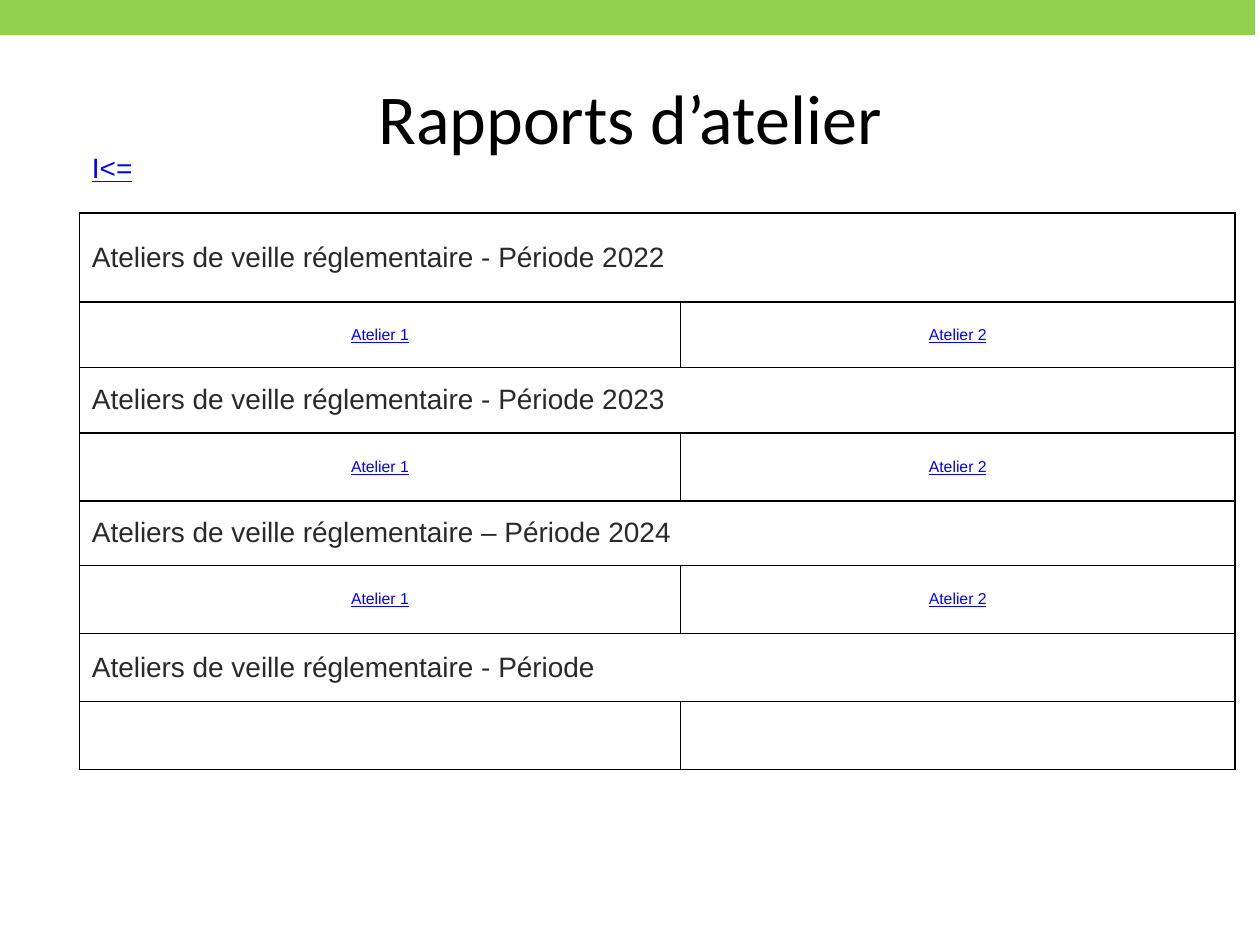
from dataclasses import dataclass

from lxml import etree
from pptx import Presentation
from pptx.dml.color import RGBColor
from pptx.enum.shapes import MSO_SHAPE
from pptx.enum.text import MSO_ANCHOR, PP_ALIGN
from pptx.oxml.ns import qn
from pptx.util import Cm, Pt

LEFT, CENTER = PP_ALIGN.LEFT, PP_ALIGN.CENTER
MIDDLE = MSO_ANCHOR.MIDDLE
RECTANGLE = MSO_SHAPE.RECTANGLE


@dataclass(frozen=True)
class Theme:
    band: str = "92D050"
    title: str = "000000"
    heading: str = "292929"
    link: str = "0000FF"
    border: str = "000000"
    title_font: str = "Calibri"
    body_font: str = "Arial"
    title_size: int = 40
    heading_size: int = 16
    link_size: int = 9
    border_width: int = 1


THEME = Theme()
COLUMN_WIDTHS = [3.43, 1.4, 2.01, 4.14, 0.33, 0.81, 4.8, 1.4, 2.03, 2.95]
ROW_HEIGHTS = [1.78, 1.8, 1.32, 1.32, 1.37, 1.3, 1.37, 1.37, 1.37, 1.96]
LAST_COLUMN = len(COLUMN_WIDTHS) - 1
LAST_ROW = len(ROW_HEIGHTS) - 1
SECOND_WORKSHOP = 6
NAVIGATION_SPANS = [(1, 2), (3, 4), (5, 6), (7, 8)]
FOOTER_SPANS = [(2, 3), (4, 7)]
PERIODS = [
    ("Ateliers de veille réglementaire - Période 2022", ["Atelier 1", "Atelier 2"]),
    ("Ateliers de veille réglementaire - Période 2023", ["Atelier 1", "Atelier 2"]),
    ("Ateliers de veille réglementaire – Période 2024", ["Atelier 1", "Atelier 2"]),
    ("Ateliers de veille réglementaire - Période", []),
]


def style_paragraph(paragraph, font_name, size, color, align=LEFT, underline=False):
    paragraph.alignment = align
    font = paragraph.font
    font.name = font_name
    font.size = Pt(size)
    font.color.rgb = RGBColor.from_string(color)
    font.underline = underline


def add_band(slide):
    band = slide.shapes.add_shape(RECTANGLE, 0, 0, Cm(25.3), Cm(0.71))
    band.shadow.inherit = False
    band.fill.solid()
    band.fill.fore_color.rgb = RGBColor.from_string(THEME.band)
    band.line.fill.background()


def set_title(slide, text):
    title = slide.shapes.title
    title.left, title.top = Cm(1.27), Cm(0.76)
    title.width, title.height = Cm(22.86), Cm(3.18)
    title.text_frame.text = text
    title.text_frame.vertical_anchor = MIDDLE
    style_paragraph(title.text_frame.paragraphs[0], THEME.title_font,
                    THEME.title_size, THEME.title, CENTER)


def set_borders(cell, drawn_sides):
    properties = cell._tc.get_or_add_tcPr()
    for position, side in enumerate("LRTB"):
        line = etree.Element(qn(f"a:ln{side}"), w=str(Pt(THEME.border_width)))
        if side in drawn_sides:
            fill = etree.SubElement(line, qn("a:solidFill"))
            etree.SubElement(fill, qn("a:srgbClr"), val=THEME.border)
        else:
            etree.SubElement(line, qn("a:noFill"))
        properties.insert(position, line)


def write_cell(cell, text, size, color, align=LEFT, underline=False):
    cell.text = text
    cell.vertical_anchor = MIDDLE
    style_paragraph(cell.text_frame.paragraphs[0], THEME.body_font,
                    size, color, align, underline)


def merge_columns(table, row, first, last):
    table.cell(row, first).merge(table.cell(row, last))


def add_grid(slide):
    table = slide.shapes.add_table(
        len(ROW_HEIGHTS), len(COLUMN_WIDTHS), Cm(1.6), Cm(2.51),
        Cm(sum(COLUMN_WIDTHS)), Cm(sum(ROW_HEIGHTS))).table
    table.first_row = False
    table.horz_banding = False
    for column, width in zip(table.columns, COLUMN_WIDTHS):
        column.width = Cm(width)
    for row_index, (row, height) in enumerate(zip(table.rows, ROW_HEIGHTS)):
        row.height = Cm(height)
        sides = {0: "B", LAST_ROW: "T"}.get(row_index, "LRTB")
        for cell in row.cells:
            cell.fill.background()
            set_borders(cell, sides)
    return table


def fill_periods(table):
    for index, (heading, workshops) in enumerate(PERIODS):
        heading_row = 1 + 2 * index
        workshop_row = heading_row + 1
        merge_columns(table, heading_row, 0, LAST_COLUMN)
        merge_columns(table, workshop_row, 0, SECOND_WORKSHOP - 1)
        merge_columns(table, workshop_row, SECOND_WORKSHOP, LAST_COLUMN)
        write_cell(table.cell(heading_row, 0), heading,
                   THEME.heading_size, THEME.heading)
        for column, workshop in zip((0, SECOND_WORKSHOP), workshops):
            write_cell(table.cell(workshop_row, column), workshop,
                       THEME.link_size, THEME.link, CENTER, True)


def add_reports_table(slide):
    table = add_grid(slide)
    for row, spans in ((0, NAVIGATION_SPANS), (LAST_ROW, FOOTER_SPANS)):
        for first, last in spans:
            merge_columns(table, row, first, last)
    write_cell(table.cell(0, 0), "I<=", THEME.heading_size, THEME.link, underline=True)
    fill_periods(table)


def main():
    presentation = Presentation()
    presentation.slide_width, presentation.slide_height = Cm(25.4), Cm(19.05)
    slide = presentation.slides.add_slide(presentation.slide_layouts[5])
    add_band(slide)
    set_title(slide, "Rapports d’atelier")
    add_reports_table(slide)
    presentation.save("out.pptx")


if __name__ == "__main__":
    main()
